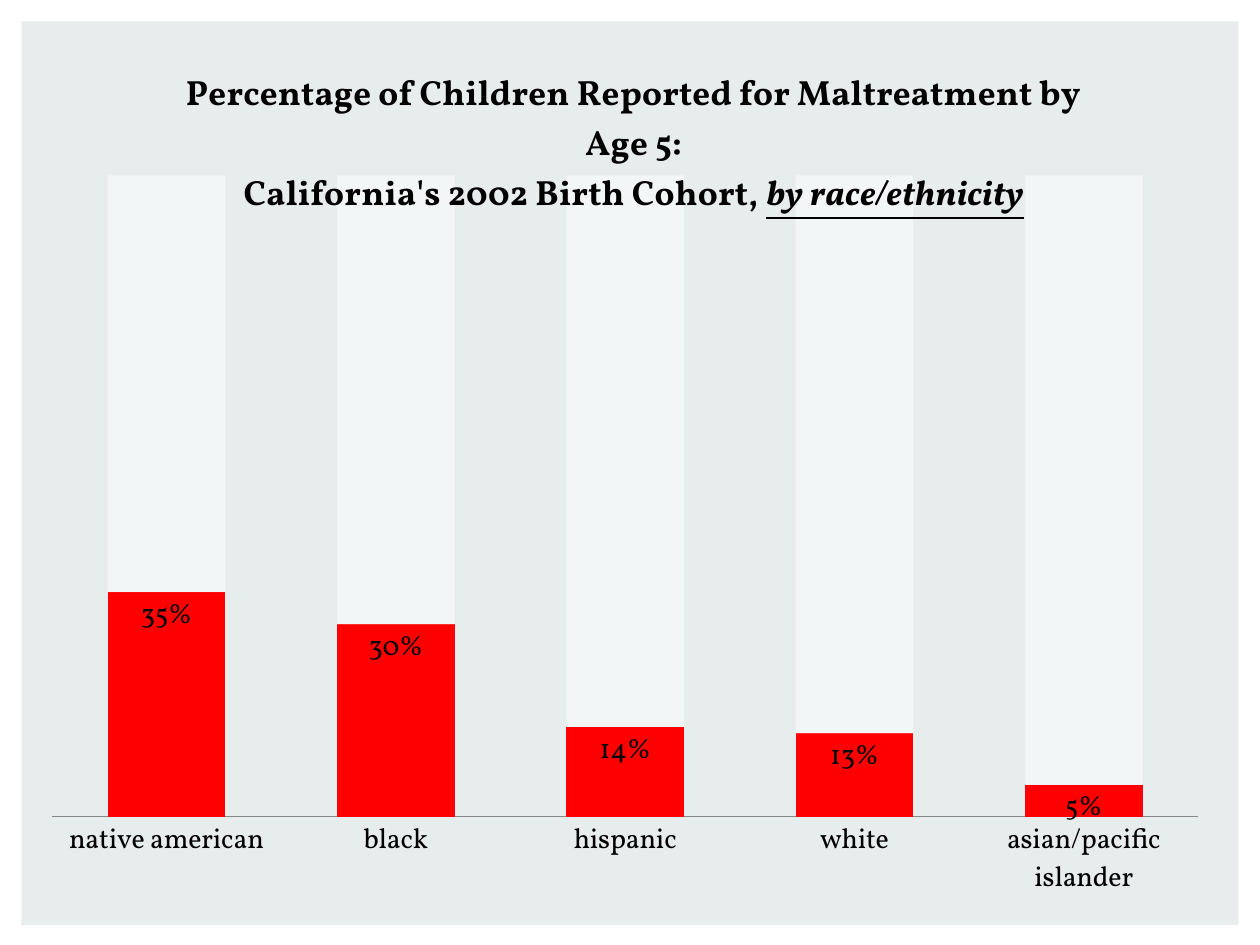
import pptx
import pptx.chart.data
import pptx.dml.color
import pptx.enum.chart
import pptx.enum.shapes
import pptx.oxml
import pptx.oxml.ns
import pptx.util

Inches, Pt = pptx.util.Inches, pptx.util.Pt
RGBColor = pptx.dml.color.RGBColor
qn, nsdecls = pptx.oxml.ns.qn, pptx.oxml.ns.nsdecls

FONT = "Vollkorn"
BLACK = RGBColor(0x00, 0x00, 0x00)
WHITE = RGBColor(0xFF, 0xFF, 0xFF)
RED = RGBColor(0xFF, 0x00, 0x00)
PALE = RGBColor(0xE7, 0xEC, 0xED)
GRAY = RGBColor(0x87, 0x87, 0x87)

HEADING = [
    [("Percentage of Children Reported for Maltreatment by Age 5:", False)],
    [("California's 2002 Birth Cohort, ", False), ("by race/ethnicity", True)],
]
REPORTED = {
    "native american": 35,
    "black": 30,
    "hispanic": 14,
    "white": 13,
    "asian/pacific islander": 5,
}


def style_font(font, size):
    font.name = FONT
    font.size = Pt(size)
    font.color.rgb = BLACK


def place(parent, index, inner=False, **fractions):
    for old in parent.findall(qn("c:layout")):
        parent.remove(old)
    target = '<c:layoutTarget val="inner"/>' if inner else ""
    modes = "".join(f'<c:{key}Mode val="edge"/>' for key in "xy")
    sizes = "".join(f'<c:{key} val="{value}"/>' for key, value in fractions.items())
    parent.insert(index, pptx.oxml.parse_xml(
        f'<c:layout {nsdecls("c")}><c:manualLayout>{target}{modes}{sizes}'
        "</c:manualLayout></c:layout>"))


def add_panel(slide):
    panel = slide.shapes.add_shape(
        pptx.enum.shapes.MSO_SHAPE.RECTANGLE,
        Inches(0.17), Inches(0.17), Inches(9.66), Inches(7.17))
    panel.shadow.inherit = False
    panel.fill.solid()
    panel.fill.fore_color.rgb = PALE
    panel.line.fill.background()


def add_cohort_chart(slide):
    cohort = pptx.chart.data.CategoryChartData()
    cohort.categories = list(REPORTED)
    cohort.add_series("Series 1", list(REPORTED.values()))
    cohort.add_series("Series 2", [100 - share for share in REPORTED.values()])
    chart = slide.shapes.add_chart(
        pptx.enum.chart.XL_CHART_TYPE.COLUMN_STACKED_100,
        Inches(0.26), Inches(0.31), Inches(9.48), Inches(6.89), cohort).chart
    style_font(chart.font, 10)
    chart.has_legend = False
    return chart


def write_heading(chart):
    heading = chart.chart_title.text_frame
    for number, pieces in enumerate(HEADING):
        line = heading.add_paragraph() if number else heading.paragraphs[0]
        for text, emphasized in pieces:
            run = line.add_run()
            run.text = text
            style_font(run.font, 20)
            run.font.bold = True
            run.font.italic = run.font.underline = emphasized
    place(chart.chart_title._element, 1, x=0.125, y=0.03)


def format_axes(chart):
    chart.value_axis.visible = False
    chart.value_axis.has_major_gridlines = False
    groups = chart.category_axis
    groups.major_tick_mark = pptx.enum.chart.XL_TICK_MARK.NONE
    groups.format.line.color.rgb = GRAY
    style_font(groups.tick_labels.font, 16)


def format_columns(chart):
    columns = chart.plots[0]
    columns.gap_width = 95
    columns.overlap = 100
    columns.vary_by_categories = False
    for series, color in zip(columns.series, (RED, WHITE)):
        series.format.fill.solid()
        series.format.fill.fore_color.rgb = color
        series.invert_if_negative = False
    reported, remainder = columns.series
    tint = remainder._element.find(".//" + qn("a:srgbClr"))
    tint.append(pptx.oxml.parse_xml(f'<a:alpha {nsdecls("a")} val="54000"/>'))
    labels = reported.data_labels
    labels.show_value = True
    labels.number_format = '0"%"'
    labels.number_format_is_linked = False
    labels.position = pptx.enum.chart.XL_LABEL_POSITION.INSIDE_END
    style_font(labels.font, 16)
    place(chart._chartSpace.find(".//" + qn("c:plotArea")), 0,
          inner=True, x=0.016, y=0.157, w=0.96, h=0.739)


def main():
    deck = pptx.Presentation()
    deck.slide_width, deck.slide_height = Inches(10), Inches(7.5)
    slide = deck.slides.add_slide(deck.slide_layouts[6])
    add_panel(slide)
    chart = add_cohort_chart(slide)
    write_heading(chart)
    format_axes(chart)
    format_columns(chart)
    deck.save("out.pptx")


if __name__ == "__main__":
    main()
